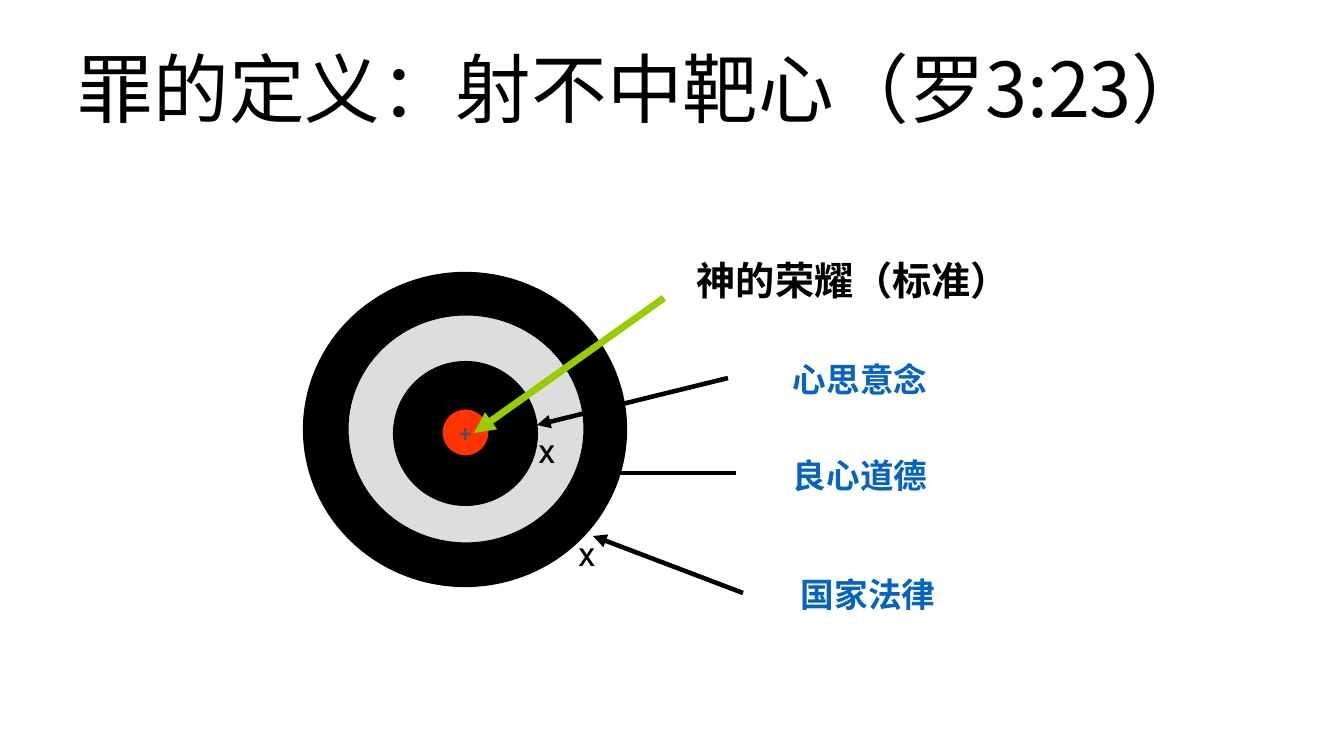
from dataclasses import dataclass

from lxml.etree import SubElement
from pptx import Presentation
from pptx.dml.color import RGBColor
from pptx.enum.shapes import MSO_CONNECTOR, MSO_SHAPE
from pptx.enum.text import MSO_ANCHOR, PP_ALIGN
from pptx.oxml.ns import qn
from pptx.util import Emu, Pt


@dataclass(frozen=True)
class Theme:
    black: str = "000000"
    ring_grey: str = "DDDDDD"
    bullseye_red: str = "FF3300"
    cross_slate: str = "44546A"
    glory_green: str = "99CC00"
    label_blue: str = "0563C1"
    chinese_font: str = "Noto Sans CJK SC"
    label_font: str = "Cabin"
    cross_font: str = "Calibri"
    title_size: int = 54
    glory_size: int = 28
    label_size: int = 24
    mark_size: int = 18


THEME = Theme()


def px(length):
    return Emu(round(length * 914400 / 100.8))


def colour(code):
    return RGBColor.from_string(code)


def add_run(paragraph, words, size, font, code, bold):
    run = paragraph.add_run()
    run.text = words
    run.font.size = Pt(size)
    run.font.name = font
    run.font.bold = bold
    run.font.color.rgb = colour(code)
    SubElement(run.font._element, qn("a:ea"), typeface=THEME.chinese_font)


def add_text(slide, box, words, size, code=THEME.black, font=THEME.label_font, bold=True):
    frame = slide.shapes.add_textbox(*map(px, box)).text_frame
    frame.word_wrap = True
    add_run(frame.paragraphs[0], words, size, font, code, bold)
    return frame


def add_title(slide, words):
    frame = add_text(slide, (68, 30, 1210, 126), words, THEME.title_size,
                     font=THEME.chinese_font, bold=False)
    frame.vertical_anchor = MSO_ANCHOR.MIDDLE
    frame.paragraphs[0].line_spacing = 0.9


def add_disc(slide, box, fill, outline_width):
    disc = slide.shapes.add_shape(MSO_SHAPE.OVAL, *map(px, box))
    disc.shadow.inherit = False
    disc.fill.solid()
    disc.fill.fore_color.rgb = colour(fill)
    disc.line.color.rgb = colour(THEME.black if fill == THEME.black else fill)
    disc.line.color.rgb = colour(THEME.black)
    disc.line.width = Pt(outline_width)
    return disc


def add_bullseye(slide):
    frame = add_disc(slide, (442, 409, 47, 47), THEME.bullseye_red, 0.75).text_frame
    frame.word_wrap = False
    frame.vertical_anchor = MSO_ANCHOR.MIDDLE
    frame.paragraphs[0].alignment = PP_ALIGN.CENTER
    add_run(frame.paragraphs[0], "+", THEME.mark_size, THEME.cross_font,
            THEME.cross_slate, True)


def add_arrow(slide, start, end, code=THEME.black, width=3.25):
    arrow = slide.shapes.add_connector(MSO_CONNECTOR.STRAIGHT, *map(px, start + end))
    arrow.line.color.rgb = colour(code)
    arrow.line.width = Pt(width)
    SubElement(arrow.line._get_or_add_ln(), qn("a:tailEnd"), type="triangle")
    SubElement(arrow._element.spPr, qn("a:effectLst"))


def main():
    deck = Presentation()
    deck.slide_width, deck.slide_height = px(1344), px(756)
    slide = deck.slides.add_slide(deck.slide_layouts[6])

    add_title(slide, "罪的定义：射不中靶心（罗3:23）")

    for box, fill, outline_width in (
        ((306, 275, 318, 309), THEME.black, 4.5),
        ((347, 314, 238, 230), THEME.ring_grey, 2.25),
        ((394, 362, 143, 143), THEME.black, 1.5),
    ):
        add_disc(slide, box, fill, outline_width)

    for start, end in (
        ((743, 593), (593, 536)),
        ((736, 473), (577, 473)),
        ((728, 378), (537, 425)),
    ):
        add_arrow(slide, start, end)

    add_bullseye(slide)
    add_arrow(slide, (664, 298), (474, 433), THEME.glory_green, 5)

    add_text(slide, (687, 251, 342, 57), "神的荣耀（标准）", THEME.glory_size)
    for left, top, standard in (
        (783, 354, "心思意念"),
        (783, 450, "良心道德"),
        (791, 569, "国家法律"),
    ):
        add_text(slide, (left, top, 207, 50), standard, THEME.label_size, THEME.label_blue)

    for left, top in ((569, 536), (553, 481), (529, 433)):
        add_text(slide, (left, top, 39, 40), "X", THEME.mark_size)

    deck.save("out.pptx")


if __name__ == "__main__":
    main()
